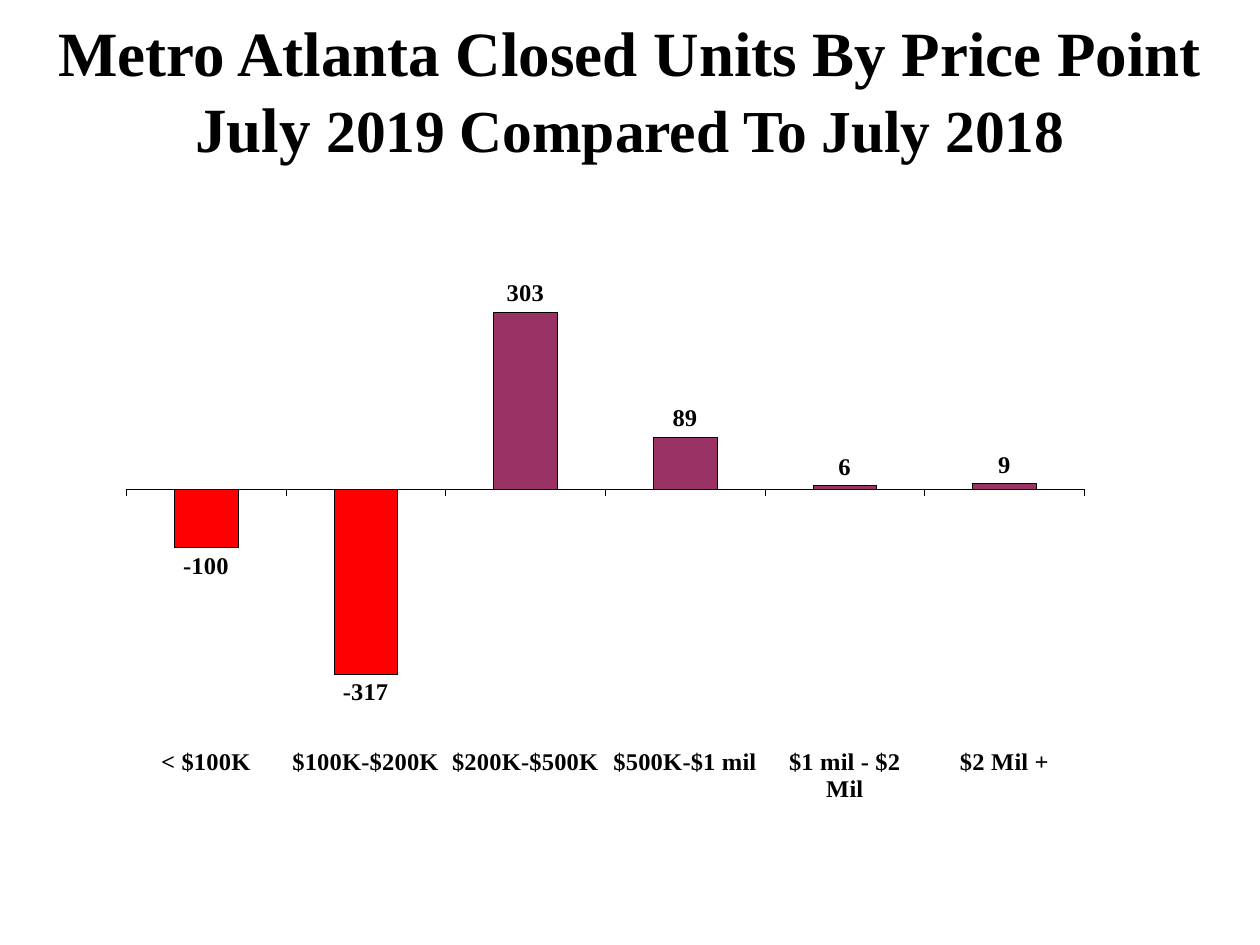
from dataclasses import dataclass

from lxml.etree import SubElement as Sub
from pptx import Presentation
from pptx.chart.data import CategoryChartData as Data
from pptx.dml.color import RGBColor
from pptx.enum.chart import XL_CHART_TYPE as Kind
from pptx.enum.chart import XL_LABEL_POSITION as Spot
from pptx.enum.chart import XL_TICK_LABEL_POSITION as Tick
from pptx.enum.chart import XL_TICK_MARK as Mark
from pptx.enum.text import MSO_ANCHOR as Anchor
from pptx.enum.text import MSO_AUTO_SIZE as Auto
from pptx.enum.text import PP_ALIGN as Align
from pptx.oxml.ns import qn
from pptx.util import Emu, Pt

SCALE = 914400 / 126
FACE = "Times New Roman"
BLACK, RED, PLUM = "000000", "FF0000", "993366"


@dataclass
class Bar:
    name: str
    count: int


BARS = [
    Bar("< $100K", -100),
    Bar("$100K-$200K", -317),
    Bar("$200K-$500K", 303),
    Bar("$500K-$1 mil", 89),
    Bar("$1 mil - $2 Mil", 6),
    Bar("$2 Mil +", 9),
]


def px(num: int) -> Emu:
    return Emu(round(num * SCALE))


def tint(code: str) -> RGBColor:
    return RGBColor.from_string(code)


def style(font, size: int, color: str = BLACK, bold: bool = True) -> None:
    font.name, font.size, font.bold = FACE, Pt(size), bold
    font.color.rgb = tint(color)


def write(para, text: str, **form) -> None:
    run = para.add_run()
    run.text = text
    style(run.font, **form)


def draw_title(shape) -> None:
    shape.left, shape.top, shape.width, shape.height = map(px, (0, 63, 1260, 53))
    frame = shape.text_frame
    frame.word_wrap, frame.auto_size = True, Auto.NONE
    frame.vertical_anchor = Anchor.MIDDLE
    para = frame.paragraphs[0]
    para.alignment = Align.CENTER
    write(para, "Metro Atlanta Closed Units By Price Point", size=36)
    para.add_line_break()
    write(para, "July ", size=36)
    write(para, "2019 Compared To July 2018", size=34)


def place_plot(chart, **box: float) -> None:
    """Fix the inner plot area as shares of the chart frame."""
    area = chart._chartSpace.chart.plotArea
    for old in area.findall(qn("c:layout")):
        area.remove(old)
    lay = Sub(area, qn("c:layout"))
    area.insert(0, lay)
    man = Sub(lay, qn("c:manualLayout"))
    Sub(man, qn("c:layoutTarget")).set("val", "inner")
    for key in ("xMode", "yMode"):
        Sub(man, qn(f"c:{key}")).set("val", "edge")
    for key, val in box.items():
        Sub(man, qn(f"c:{key}")).set("val", str(val))


def draw_chart(slide, bars: list[Bar]) -> None:
    data = Data(number_format="0")
    data.categories = [bar.name for bar in bars]
    data.add_series("Series 1", [bar.count for bar in bars])
    box = map(px, (126, 116, 1089, 687))
    chart = slide.shapes.add_chart(Kind.COLUMN_CLUSTERED, *box, data).chart
    chart.has_legend = chart.has_title = False
    style(chart.font, 14)
    place_plot(chart, x=0, y=0.21, w=0.88, h=0.71)

    # Axes
    base, scale = chart.category_axis, chart.value_axis
    base.tick_label_position = Tick.LOW
    base.major_tick_mark = Mark.OUTSIDE
    base.format.line.color.rgb = tint(BLACK)
    base.format.line.width = Pt(0.25)
    scale.visible = scale.has_major_gridlines = False
    scale.minimum_scale, scale.maximum_scale = -424, 396

    # Columns, red where sales fell
    plot = chart.plots[0]
    plot.gap_width, plot.vary_by_categories = 150, False
    row = plot.series[0]
    row.invert_if_negative = False
    for part, code in [(row, PLUM)] + [
        (row.points[i], RED) for i, bar in enumerate(bars) if bar.count < 0
    ]:
        part.format.fill.solid()
        part.format.fill.fore_color.rgb = tint(code)
        part.format.line.color.rgb = tint(BLACK)
        part.format.line.width = Pt(0.25)

    # Value labels
    plot.has_data_labels = True
    tags = plot.data_labels
    tags.show_value, tags.position = True, Spot.OUTSIDE_END
    tags.number_format, tags.number_format_is_linked = "0", False
    style(tags.font, 14)


def main() -> None:
    deck = Presentation()
    deck.slide_width, deck.slide_height = px(1260), px(945)
    slide = deck.slides.add_slide(deck.slide_layouts[5])
    draw_title(slide.shapes.title)
    draw_chart(slide, BARS)
    deck.save("out.pptx")


if __name__ == "__main__":
    main()
